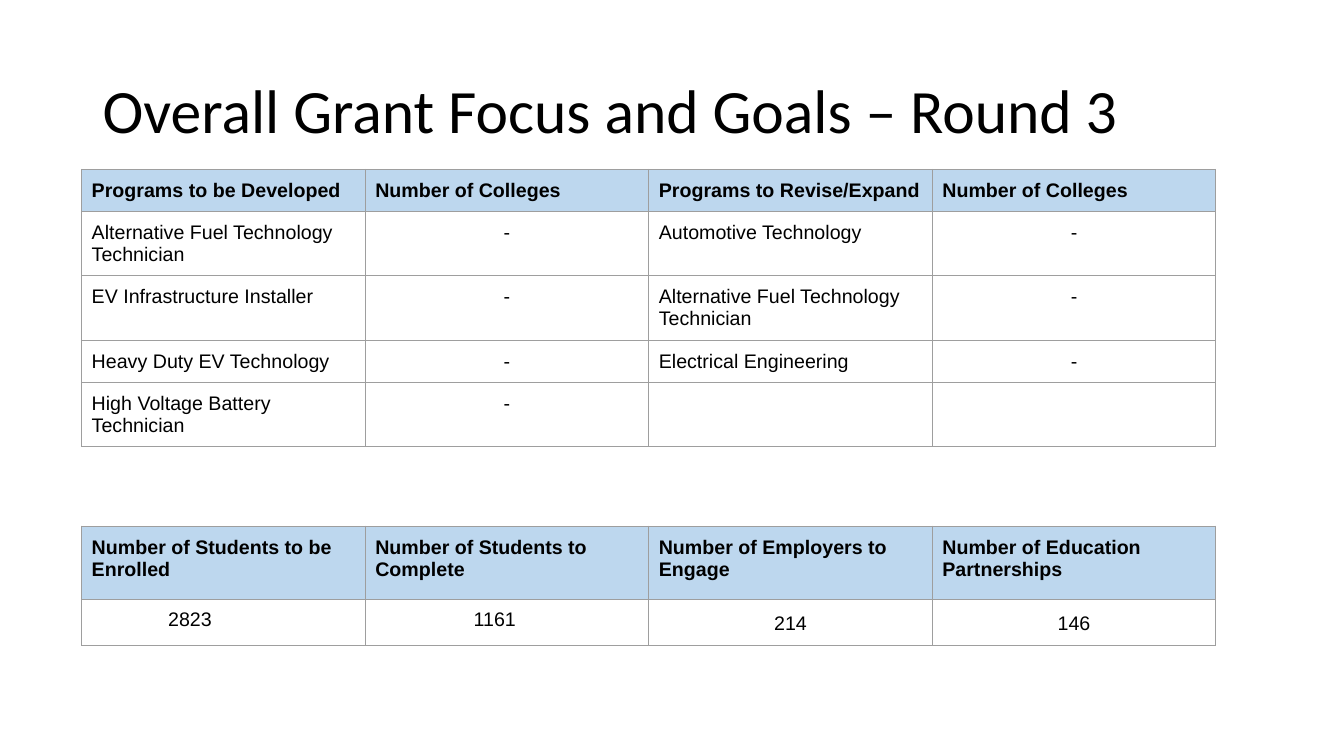
from lxml import etree
from pptx import Presentation
from pptx.dml.color import RGBColor
from pptx.enum.text import MSO_ANCHOR, PP_ALIGN
from pptx.oxml.ns import qn
from pptx.util import Inches, Pt

LEFT, CENTER = PP_ALIGN.LEFT, PP_ALIGN.CENTER
MIDDLE = MSO_ANCHOR.MIDDLE

BLACK, HEADER_BLUE, BORDER_GRAY = "000000", "BDD7EE", "9E9E9E"
TABLE_LEFT, COLUMN_WIDTH = 0.81, 2.8125
ONE_LINE, TWO_LINES = 0.42, 0.635

PROGRAMS = [
    ["Programs to be Developed", "Number of Colleges",
     "Programs to Revise/Expand", "Number of Colleges"],
    ["Alternative Fuel Technology Technician", "-", "Automotive Technology", "-"],
    ["EV Infrastructure Installer", "-", "Alternative Fuel Technology Technician", "-"],
    ["Heavy Duty EV Technology", "-", "Electrical Engineering", "-"],
    ["High Voltage Battery Technician", "-", "", ""],
]
TARGETS = [
    ["Number of Students to be Enrolled", "Number of Students to Complete",
     "Number of Employers to Engage", "Number of Education Partnerships"],
    ["", "", "214", "146"],
]


def color(value):
    return RGBColor.from_string(value)


def write(frame, text, size=14, font="Arial", bold=False, align=LEFT, spacing=1.0):
    para = frame.paragraphs[0]
    para.alignment = align
    para.line_spacing = spacing
    span = para.add_run()
    span.text = text
    span.font.size = Pt(size)
    span.font.name = font
    span.font.bold = bold
    span.font.color.rgb = color(BLACK)


def add_text(page, text, left, top, width, height, wrap=False, **style):
    box = page.shapes.add_textbox(*map(Inches, (left, top, width, height)))
    frame = box.text_frame
    frame.word_wrap = wrap
    frame.vertical_anchor = MIDDLE if wrap else None
    write(frame, text, **style)


def set_borders(cell):
    properties = cell._tc.get_or_add_tcPr()
    for position, side in enumerate(("lnL", "lnR", "lnT", "lnB")):
        line = etree.Element(qn(f"a:{side}"), w=str(Pt(0.75)))
        fill = etree.SubElement(line, qn("a:solidFill"))
        etree.SubElement(fill, qn("a:srgbClr"), val=BORDER_GRAY)
        properties.insert(position, line)


def fill_cell(cell, text, is_header, spacing):
    if is_header:
        cell.fill.solid()
        cell.fill.fore_color.rgb = color(HEADER_BLUE)
    else:
        cell.fill.background()
    set_borders(cell)
    if not text:
        return
    cell.margin_left = cell.margin_right = Inches(0.1)
    cell.margin_top = cell.margin_bottom = Inches(0.1)
    is_value = text == "-" or text.isdigit()
    write(cell.text_frame, text, bold=is_header,
          align=CENTER if is_value else LEFT,
          spacing=spacing if is_value else 1.0)


def add_grid(page, rows, top, heights, spacing=1.0):
    columns = len(rows[0])
    frame = page.shapes.add_table(
        len(rows), columns, Inches(TABLE_LEFT), Inches(top),
        Inches(columns * COLUMN_WIDTH), Inches(sum(heights)))
    table = frame.table
    table.horz_banding = False
    for column in table.columns:
        column.width = Inches(COLUMN_WIDTH)
    for row_index, (texts, height) in enumerate(zip(rows, heights)):
        table.rows[row_index].height = Inches(height)
        for column_index, text in enumerate(texts):
            fill_cell(table.cell(row_index, column_index), text,
                      row_index == 0, spacing)


def main():
    deck = Presentation()
    deck.slide_width, deck.slide_height = Inches(13.33), Inches(7.5)
    page = deck.slides.add_slide(deck.slide_layouts[6])

    # Programs and targets
    add_grid(page, PROGRAMS, 1.68,
             [ONE_LINE, TWO_LINES, TWO_LINES, ONE_LINE, TWO_LINES])
    add_grid(page, TARGETS, 5.22, [0.73, 0.45], spacing=1.15)

    # Title
    add_text(page, "Overall Grant Focus and Goals – Round 3", 0.92, 0.4, 11.5, 1.45,
             wrap=True, size=44, font="Calibri", spacing=0.9)

    # Student counts, set over the first two target cells
    for text, left in (("2823", 1.57), ("1161", 4.6)):
        add_text(page, text, left, 5.97, 0.73, 0.34)

    deck.save("out.pptx")


if __name__ == "__main__":
    main()
